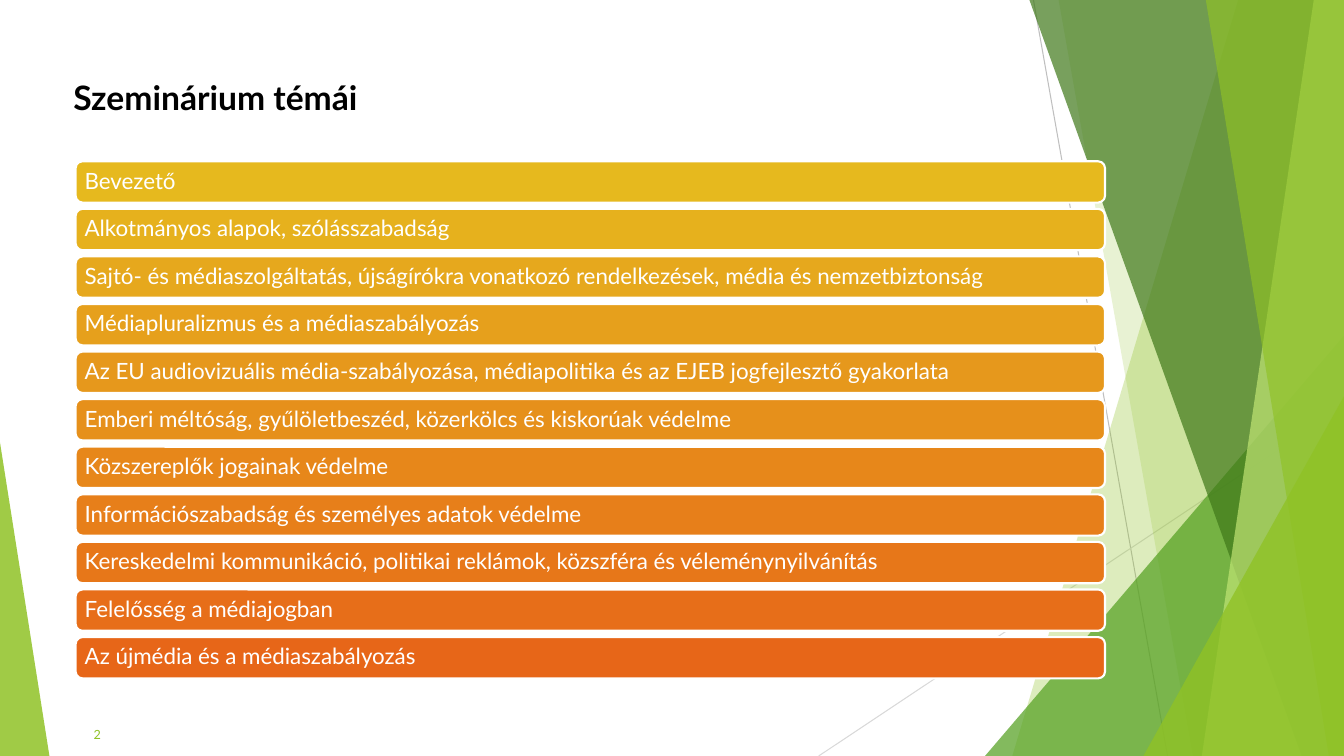
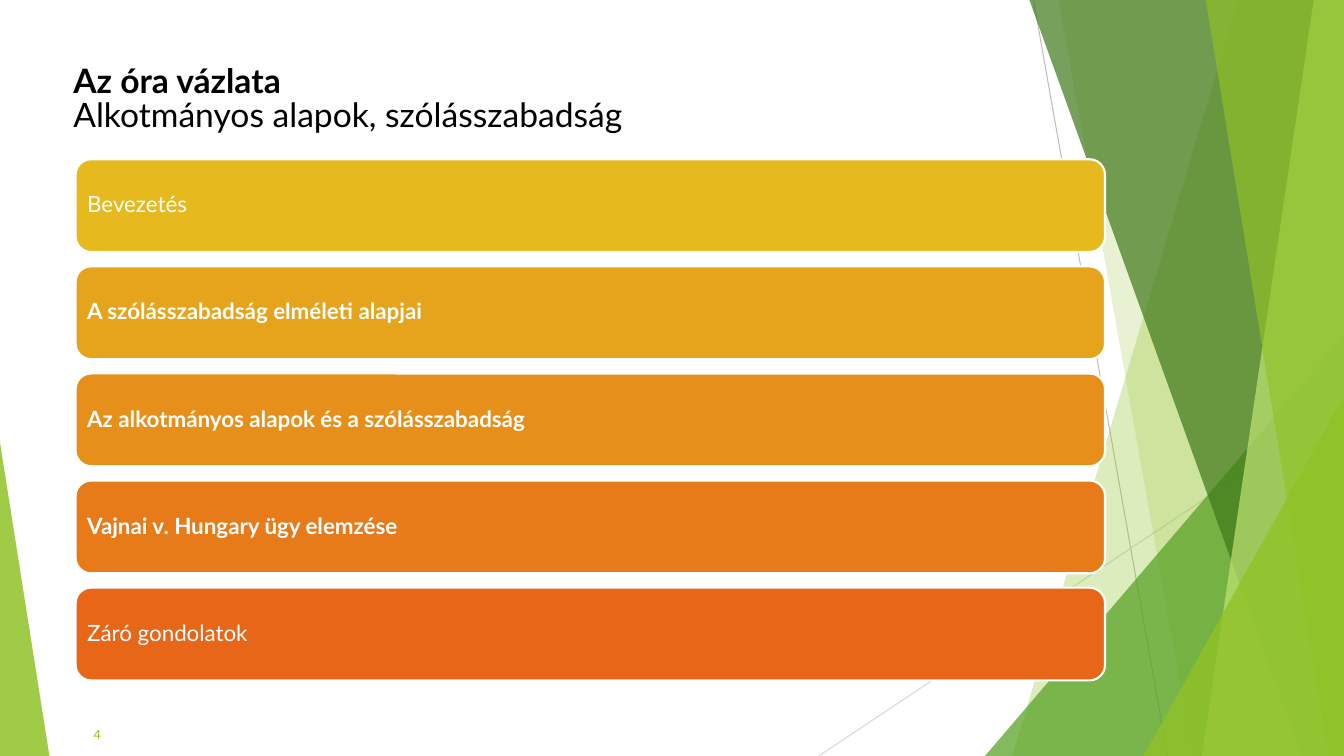
from pptx import Presentation
from pptx.dml.color import RGBColor
from pptx.enum import shapes, text
from pptx.oxml import xmlchemy
from pptx.util import Inches, Pt

FONT = "Lato"
WHITE = RGBColor(0xFF, 0xFF, 0xFF)
BLACK = RGBColor(0x00, 0x00, 0x00)
GREEN = RGBColor(0x90, 0xC2, 0x26)
MID_GREEN = RGBColor(0x54, 0xA0, 0x21)
DARK_GREEN = RGBColor(0x3F, 0x78, 0x19)
PALE_GREEN = RGBColor(0xC0, 0xE4, 0x74)
GREY = RGBColor(0xBF, 0xBF, 0xBF)
LIGHT_GREY = RGBColor(0xD9, 0xD9, 0xD9)
FIRST_BAR = RGBColor(0xE6, 0xB9, 0x1E)
LAST_BAR = RGBColor(0xE7, 0x66, 0x18)

WIDTH, HEIGHT = 13.33, 7.5
BAR_LEFT, BAR_WIDTH = 0.75, 10.21

TOPICS = [
    "Bevezető",
    "Alkotmányos alapok, szólásszabadság",
    "Sajtó- és médiaszolgáltatás, újságírókra vonatkozó rendelkezések, média és nemzetbiztonság",
    "Médiapluralizmus és a médiaszabályozás",
    "Az EU audiovizuális média-szabályozása, médiapolitika és az EJEB jogfejlesztő gyakorlata",
    "Emberi méltóság, gyűlöletbeszéd, közerkölcs és kiskorúak védelme",
    "Közszereplők jogainak védelme",
    "Információszabadság és személyes adatok védelme",
    "Kereskedelmi kommunikáció, politikai reklámok, közszféra és véleménynyilvánítás",
    "Felelősség a médiajogban",
    "Az újmédia és a médiaszabályozás",
]
OUTLINE = [
    "Bevezetés",
    "A szólásszabadság elméleti alapjai",
    "Az alkotmányos alapok és a szólásszabadság",
    "Vajnai v. Hungary ügy elemzése",
    "Záró gondolatok",
]


def paint(shape, color, opacity):
    shape.shadow.inherit = False
    shape.line.fill.background()
    shape.fill.solid()
    shape.fill.fore_color.rgb = color
    color_element = shape.fill._xPr.solidFill.srgbClr
    alpha = xmlchemy.OxmlElement("a:alpha")
    alpha.set("val", str(opacity * 1000))
    color_element.append(alpha)


def add_hairline(page, start, end, color):
    line = page.shapes.add_connector(
        shapes.MSO_CONNECTOR.STRAIGHT, *map(Inches, start + end))
    line.line.color.rgb = color
    line.line.width = Pt(0.75)
    line._element.spPr.append(xmlchemy.OxmlElement("a:effectLst"))


def add_edge_band(page, top_x, bottom_x, color, opacity):
    builder = page.shapes.build_freeform(Inches(top_x), 0, scale=1.0)
    corners = [(WIDTH, 0), (WIDTH, HEIGHT), (bottom_x, HEIGHT)]
    builder.add_line_segments([(Inches(x), Inches(y)) for x, y in corners])
    paint(builder.convert_to_shape(), color, opacity)


def add_corner(page, left, top, width, apex, color, opacity):
    corner = page.shapes.add_shape(
        shapes.MSO_SHAPE.ISOSCELES_TRIANGLE,
        *map(Inches, (left, top, width, HEIGHT - top)))
    corner.adjustments[0] = apex
    paint(corner, color, opacity)


def add_backdrop(page):
    add_hairline(page, (10.25, 0), (11.58, HEIGHT), GREY)
    add_hairline(page, (WIDTH, 4.03), (8.12, HEIGHT), LIGHT_GREY)
    add_edge_band(page, 12.28, 10.04, GREEN, 30)
    add_edge_band(page, 10.5, 11.83, GREEN, 20)
    add_corner(page, 9.77, 3.33, 3.56, 1, MID_GREEN, 72)
    add_edge_band(page, 10.21, 12.91, DARK_GREEN, 70)
    add_edge_band(page, 13.03, 11.92, PALE_GREEN, 70)
    add_edge_band(page, 11.96, 13.18, GREEN, 65)
    add_corner(page, 11.34, 3.93, 1.99, 1, GREEN, 80)
    add_corner(page, 0, 4.39, 0.49, 0, GREEN, 85)


def style(para, size, color, bold=False):
    para.font.name = FONT
    para.font.size = Pt(size)
    para.font.color.rgb = color
    para.font.bold = bold


def add_text_frame(page, left, top, width, height):
    box = page.shapes.add_textbox(*map(Inches, (left, top, width, height)))
    box.text_frame.word_wrap = True
    box.text_frame.vertical_anchor = text.MSO_ANCHOR.MIDDLE
    return box.text_frame


def add_title(page, lines):
    frame = add_text_frame(page, 0.63, 0.6, 12.07, 0.79)
    frame.text = "\n".join(lines)
    for index, para in enumerate(frame.paragraphs):
        para.line_spacing = Pt(24)
        style(para, 24, BLACK, bold=index == 0)


def add_page_number(page, number):
    frame = add_text_frame(page, 0.63, 7.15, 0.47, 0.28)
    frame.text = str(number)
    para = frame.paragraphs[0]
    para.alignment = text.PP_ALIGN.RIGHT
    style(para, 9, GREEN)


def blend(share):
    return RGBColor(*(round(a + (b - a) * share)
                      for a, b in zip(FIRST_BAR, LAST_BAR)))


def add_bar(page, label, top, height, color, bold):
    bar = page.shapes.add_shape(
        shapes.MSO_SHAPE.ROUNDED_RECTANGLE,
        *map(Inches, (BAR_LEFT, top, BAR_WIDTH, height)))
    bar.shadow.inherit = False
    bar.fill.solid()
    bar.fill.fore_color.rgb = color
    bar.line.color.rgb = WHITE
    bar.line.width = Pt(1.5)
    frame = bar.text_frame
    frame.word_wrap = True
    frame.vertical_anchor = text.MSO_ANCHOR.MIDDLE
    frame.margin_left = frame.margin_right = Inches(0.07)
    frame.margin_top = frame.margin_bottom = Inches(0.07)
    frame.text = label
    para = frame.paragraphs[0]
    para.alignment = text.PP_ALIGN.LEFT
    para.line_spacing = 0.9
    style(para, 16, WHITE, bold)


def add_bar_list(page, labels, first_top, last_top, height, bold_labels=()):
    steps = len(labels) - 1
    for index, label in enumerate(labels):
        share = index / steps
        top = first_top + (last_top - first_top) * share
        add_bar(page, label, top, height, blend(share), label in bold_labels)


def add_page(deck, title_lines, number):
    page = deck.slides.add_slide(deck.slide_layouts[6])
    add_backdrop(page)
    add_title(page, title_lines)
    add_page_number(page, number)
    return page


def main():
    deck = Presentation()
    deck.slide_width = Inches(WIDTH)
    deck.slide_height = Inches(HEIGHT)

    topics_page = add_page(deck, ["Szeminárium témái"], 2)
    add_bar_list(topics_page, TOPICS, 1.6, 6.32, 0.41)

    outline_page = add_page(deck, ["Az óra vázlata", TOPICS[1]], 4)
    add_bar_list(outline_page, OUTLINE, 1.58, 5.83, 0.92, OUTLINE[1:-1])

    deck.save("out.pptx")


if __name__ == "__main__":
    main()
